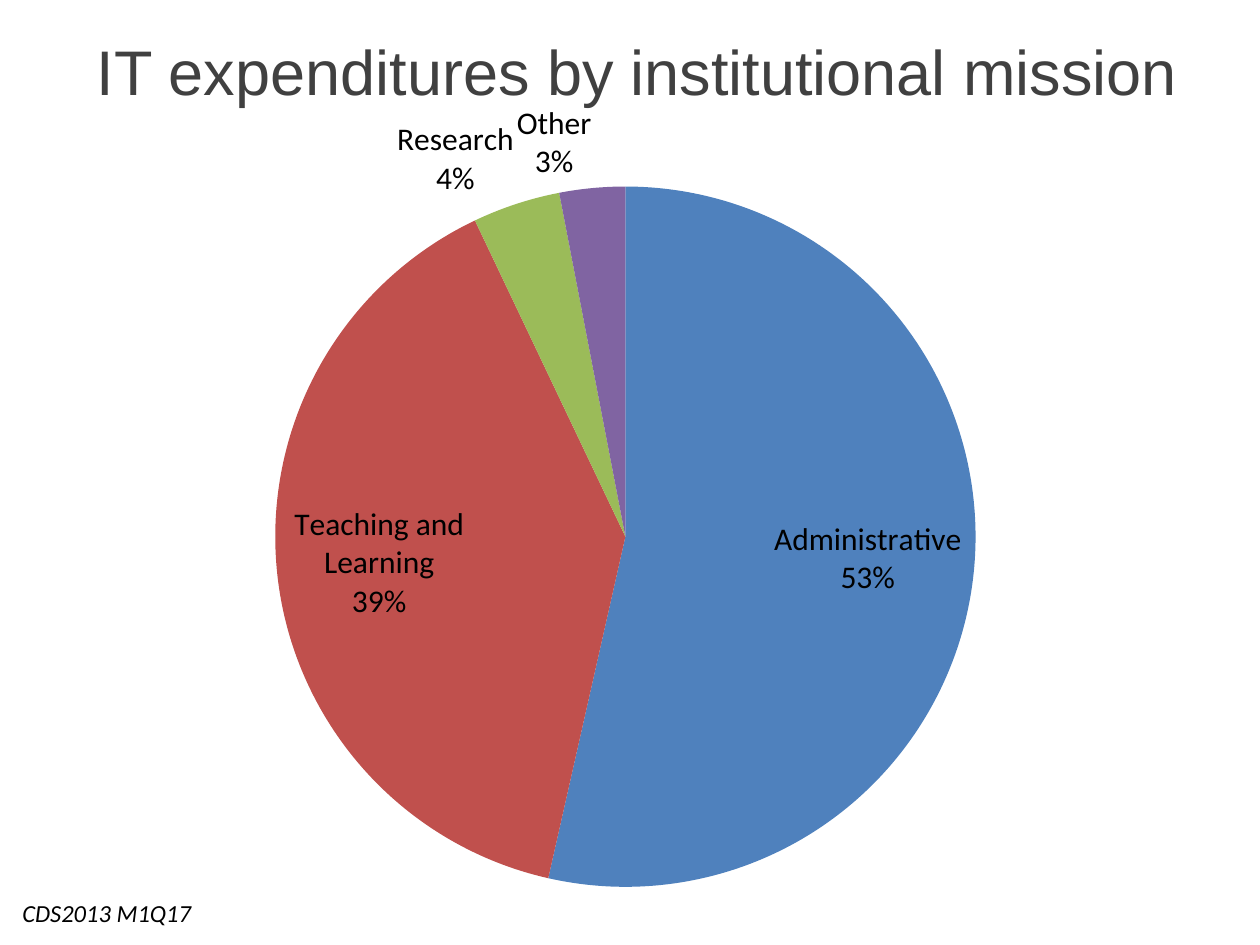
from dataclasses import dataclass

from lxml.etree import SubElement
from pptx import Presentation
from pptx.chart.data import CategoryChartData
from pptx.dml.color import RGBColor
from pptx.enum.chart import XL_CHART_TYPE as ChartType, XL_LABEL_POSITION as LabelPosition
from pptx.enum.text import MSO_ANCHOR as Anchor
from pptx.oxml.ns import qn
from pptx.util import Cm, Pt


@dataclass(frozen=True)
class Theme:
    heading_font: str = "Arial"
    body_font: str = "Calibri"
    heading_size: int = 36
    label_size: int = 18
    source_size: int = 14
    heading_color: str = "404040"
    text_color: str = "000000"
    slice_colors: tuple = ("4F81BD", "C0504D", "9BBB59", "8064A2")


class SlideBuilder:
    def __init__(self, slide, theme):
        self.slide = slide
        self.theme = theme

    def style(self, font, name, size, color, italic=False):
        font.name = name
        font.size = Pt(size)
        font.italic = italic
        font.color.rgb = RGBColor.from_string(color)

    def text(self, words, box, *font_style, italic=False, anchor=Anchor.TOP):
        frame = self.slide.shapes.add_textbox(*map(Cm, box)).text_frame
        frame.word_wrap = True
        frame.vertical_anchor = anchor
        run = frame.paragraphs[0].add_run()
        run.text = words
        self.style(run.font, *font_style, italic=italic)

    def pie(self, series_name, shares, box, plot):
        theme = self.theme
        data = CategoryChartData(number_format='0"%"')
        data.categories = list(shares)
        data.add_series(series_name, list(shares.values()))
        chart = self.slide.shapes.add_chart(ChartType.PIE, *map(Cm, box), data).chart
        chart.has_title = False
        chart.has_legend = False
        self.style(chart.font, theme.heading_font, theme.label_size, theme.text_color)

        # Slice colours
        pie_plot = chart.plots[0]
        pie_plot.vary_by_categories = True
        for index, color in enumerate(theme.slice_colors):
            fill = pie_plot.series[0].points[index].format.fill
            fill.solid()
            fill.fore_color.rgb = RGBColor.from_string(color)

        # Category and share on each slice
        pie_plot.has_data_labels = True
        labels = pie_plot.data_labels
        labels.show_category_name = True
        labels.show_value = True
        labels.number_format = '0"%"'
        labels.number_format_is_linked = False
        labels.position = LabelPosition.BEST_FIT
        self.style(labels.font, theme.body_font, theme.label_size, theme.text_color)
        separator = SubElement(labels._element, qn("c:separator"))
        separator.text = "\n"
        labels._element.find(qn("c:showBubbleSize")).addnext(separator)

        self.place_plot(chart, plot)

    def place_plot(self, chart, plot):
        area = chart._chartSpace.chart.plotArea
        layout = area.find(qn("c:layout"))
        if layout is None:
            layout = SubElement(area, qn("c:layout"))
            area.insert(0, layout)
        manual = SubElement(layout, qn("c:manualLayout"))
        settings = {"layoutTarget": "inner", "xMode": "edge", "yMode": "edge",
                    **dict(zip("xywh", plot))}
        for tag, value in settings.items():
            SubElement(manual, qn(f"c:{tag}")).set("val", str(value))


def main():
    deck = Presentation()
    deck.slide_width, deck.slide_height = Cm(25.4), Cm(19.05)
    theme = Theme()
    page = SlideBuilder(deck.slides.add_slide(deck.slide_layouts[6]), theme)

    # Expenditure shares
    mission_shares = {"Administrative": 53, "Teaching and Learning": 39,
                      "Research": 4, "Other": 3}
    page.pie("Series 1", mission_shares, (0.1, 2.1, 24.77, 16.3),
             plot=(0.22, 0.1, 0.57, 0.87))

    # Survey source
    page.text("CDS2013 M1Q17", (0.2, 17.98, 9.32, 0.86), theme.body_font,
              theme.source_size, theme.text_color, italic=True)

    # Heading
    page.text("IT expenditures by institutional mission", (1.7, 0.4, 23.3, 2.03),
              theme.heading_font, theme.heading_size, theme.heading_color,
              anchor=Anchor.MIDDLE)

    deck.save("out.pptx")


if __name__ == "__main__":
    main()
